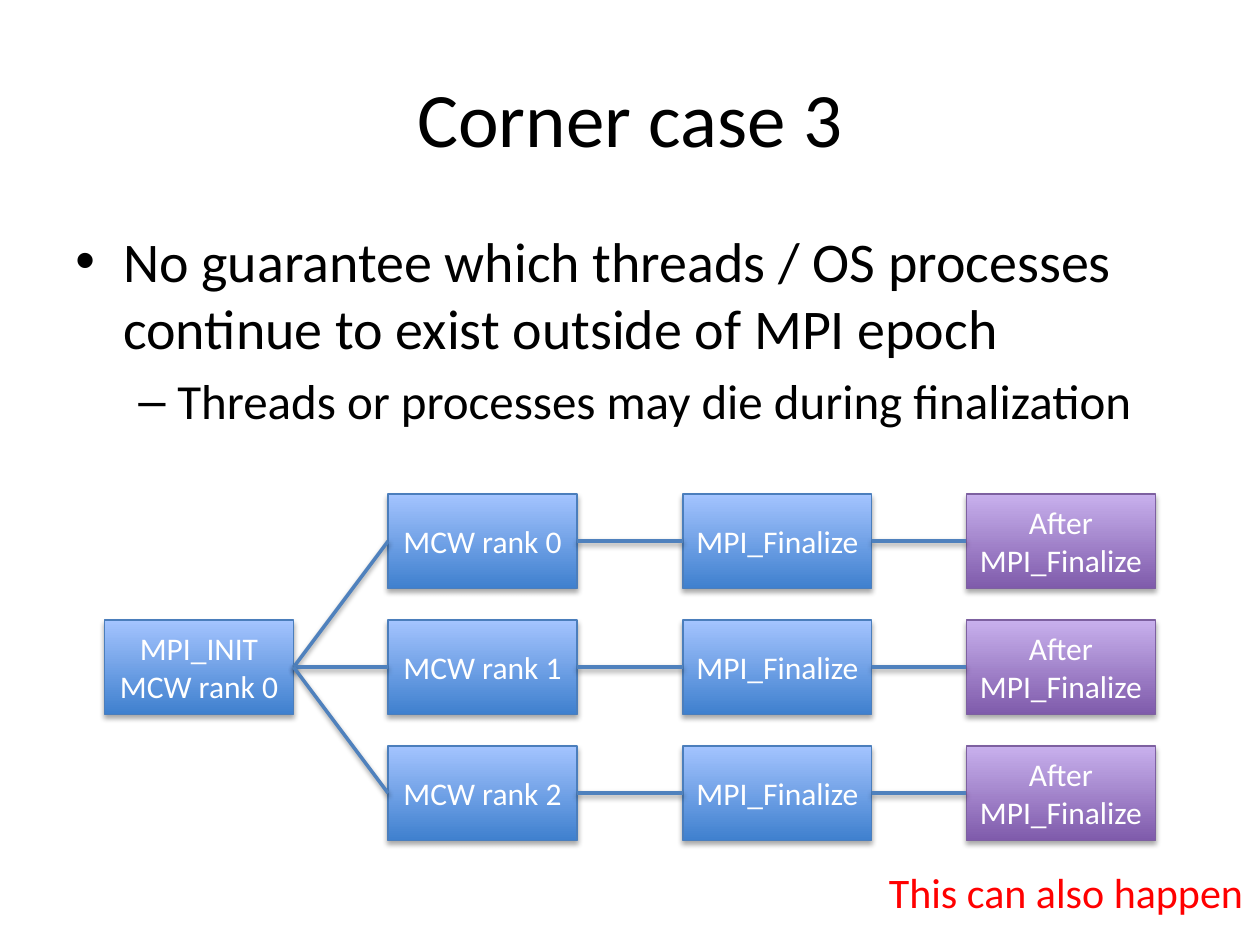
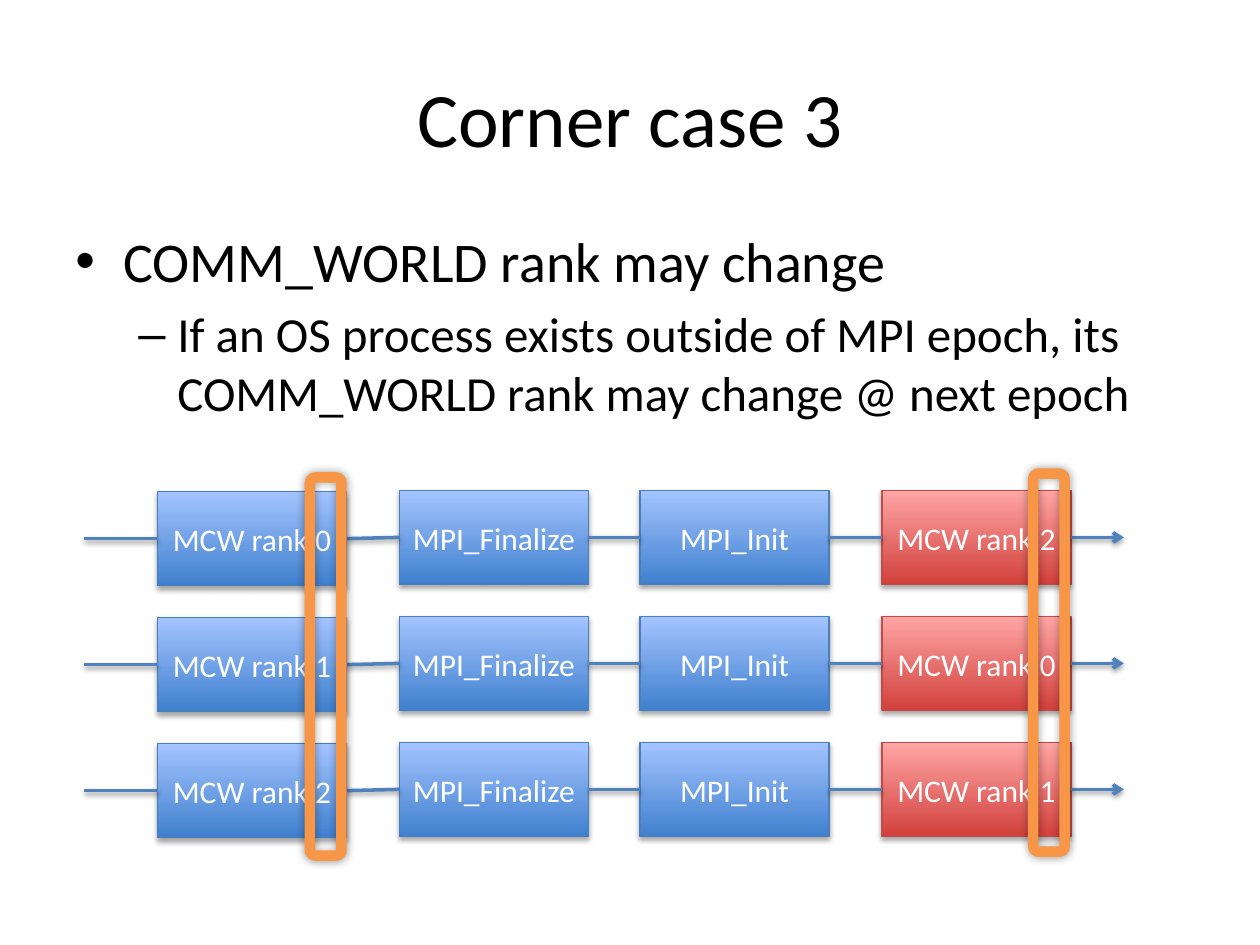
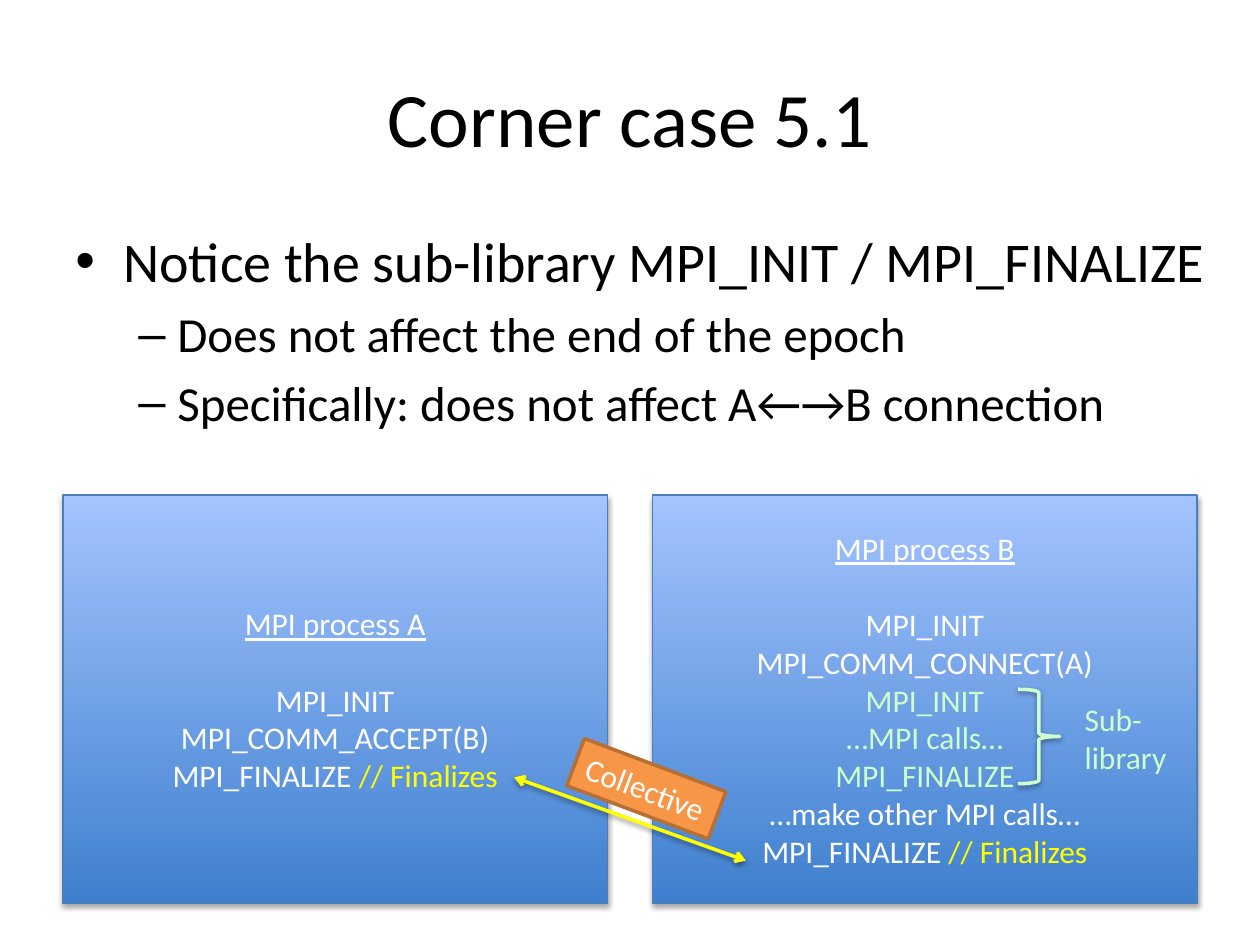
"""Build three slides on MPI session corner cases."""
from dataclasses import dataclass, field

from lxml import etree
from pptx import Presentation
from pptx import util as u
from pptx.dml.color import RGBColor
from pptx.enum import shapes, text
from pptx.oxml import ns

Point = tuple[int, int]


@dataclass(frozen=True)
class Shadow:
    opacity: int
    blur: float
    distance: float
    direction: int


@dataclass(frozen=True)
class Palette:
    bottom: str
    top: str
    outline: str


@dataclass(frozen=True)
class Theme:
    font: str = "Calibri"
    bullet_font: str = "Arial"
    black: str = "000000"
    white: str = "FFFFFF"
    red: str = "FF0000"
    yellow: str = "FFFF00"
    mint: str = "CCFFCC"
    orange: str = "F79646"
    dark_orange: str = "B76F34"
    link: str = "4F81BD"
    blue_box: Palette = Palette("3F80CE", "A4C4FF", "4B7EBC")
    purple_box: Palette = Palette("7F5BAB", "C8B0ED", "7D60A0")
    red_box: Palette = Palette("D1403C", "FFA6A5", "BF4C48")
    box_shadow: Shadow = Shadow(35, 3.1, 1.8, 90)
    line_shadow: Shadow = Shadow(38, 3.1, 1.6, 90)
    frame_shadow: Shadow = Shadow(40, 5, 0, 0)
    title_size: int = 44
    note_size: int = 24
    label_size: int = 18
    box_line: float = 0.75
    link_line: float = 2
    frame_line: float = 6


THEME = Theme()


@dataclass(frozen=True)
class Area:
    left: float
    top: float
    width: float
    height: float

    def lengths(self) -> list[int]:
        return [u.Inches(value) for value in (self.left, self.top, self.width, self.height)]


@dataclass(frozen=True)
class Run:
    text: str
    colour: str = THEME.white
    underline: bool = False


@dataclass(frozen=True)
class Level:
    indent: float
    hanging: float
    mark: str
    size: int


LEVELS = (Level(0.38, 0.38, "•", 32), Level(0.81, 0.31, "–", 28))


@dataclass(frozen=True)
class Bullet:
    text: str
    level: int = 1


@dataclass(frozen=True)
class Column:
    left: float
    top: float
    labels: list[str]
    palette: Palette = field(default=THEME.blue_box)


TITLE = Area(0.5, 0.3, 9, 1.25)
BODY = Area(0.5, 1.75, 9, 4.95)
BOX_WIDTH, BOX_HEIGHT, ROW_STEP = 1.5, 0.75, 1
LEFT_SITE, RIGHT_SITE = 1, 3
RANKS = [f"MCW rank {rank}" for rank in range(3)]


def rgb(colour: str) -> RGBColor:
    return RGBColor.from_string(colour)


def add_child(parent, tag: str, **attributes):
    values = {name: str(value) for name, value in attributes.items()}
    return etree.SubElement(parent, ns.qn(tag), values)


def cast_shadow(shape, shadow: Shadow) -> None:
    properties = shape.element.spPr
    for effects in properties.findall(ns.qn("a:effectLst")):
        properties.remove(effects)
    outer = add_child(add_child(properties, "a:effectLst"), "a:outerShdw",
                      blurRad=u.Pt(shadow.blur), dist=u.Pt(shadow.distance),
                      dir=shadow.direction * 60000, rotWithShape=0)
    add_child(add_child(outer, "a:srgbClr", val=THEME.black), "a:alpha", val=shadow.opacity * 1000)


def set_line(shape, colour: str, width: float) -> None:
    shape.line.color.rgb = rgb(colour)
    shape.line.width = u.Pt(width)


def add_run(paragraph, content: Run, size: int) -> None:
    run = paragraph.add_run()
    run.text = content.text
    run.font.name = THEME.font
    run.font.size = u.Pt(size)
    run.font.color.rgb = rgb(content.colour)
    if content.underline:
        run.font.underline = True


def write(frame, lines: list[list[Run]], size: int, align=text.PP_ALIGN.CENTER) -> None:
    for index, line in enumerate(lines):
        paragraph = frame.add_paragraph() if index else frame.paragraphs[0]
        paragraph.alignment = align
        for content in line:
            add_run(paragraph, content, size)


def add_text(slide, area: Area, lines: list[list[Run]], size: int,
             align=text.PP_ALIGN.CENTER, wrap: bool = True) -> None:
    frame = slide.shapes.add_textbox(*area.lengths()).text_frame
    frame.word_wrap = wrap
    write(frame, lines, size, align)


def add_bullets(slide, area: Area, bullets: list[Bullet]) -> None:
    frame = slide.shapes.add_textbox(*area.lengths()).text_frame
    frame.word_wrap = True
    for index, bullet in enumerate(bullets):
        level = LEVELS[bullet.level]
        paragraph = frame.add_paragraph() if index else frame.paragraphs[0]
        paragraph.level = bullet.level
        paragraph.space_before = u.Pt(level.size * 0.2)
        add_run(paragraph, Run(bullet.text, THEME.black), level.size)
        properties = paragraph._p.get_or_add_pPr()
        properties.set("marL", str(u.Inches(level.indent)))
        properties.set("indent", str(-u.Inches(level.hanging)))
        add_child(properties, "a:buFont", typeface=THEME.bullet_font)
        add_child(properties, "a:buChar", char=level.mark)


def add_case(presentation, title: str, bullets: list[Bullet], body: Area = BODY):
    slide = presentation.slides.add_slide(presentation.slide_layouts[5])
    heading = slide.shapes.title
    heading.left, heading.top, heading.width, heading.height = TITLE.lengths()
    heading.text_frame.vertical_anchor = text.MSO_ANCHOR.MIDDLE
    write(heading.text_frame, [[Run(title, THEME.black)]], THEME.title_size)
    add_bullets(slide, body, bullets)
    return slide


def add_box(slide, area: Area, lines: list[list[Run]], palette: Palette = THEME.blue_box):
    box = slide.shapes.add_shape(shapes.MSO_SHAPE.RECTANGLE, *area.lengths())
    box.fill.gradient()
    box.fill.gradient_angle = 90
    for stop, colour in zip(box.fill.gradient_stops, (palette.bottom, palette.top)):
        stop.color.rgb = rgb(colour)
    set_line(box, palette.outline, THEME.box_line)
    cast_shadow(box, THEME.box_shadow)
    write(box.text_frame, lines, THEME.label_size)
    return box


def add_column(slide, column: Column) -> list:
    return [
        add_box(slide, Area(column.left, column.top + row * ROW_STEP, BOX_WIDTH, BOX_HEIGHT),
                [[Run(label)]], column.palette)
        for row, label in enumerate(column.labels)
    ]


def add_link(slide, start: Point, end: Point, colour: str = THEME.link, arrows: tuple[str, ...] = ()):
    link = slide.shapes.add_connector(shapes.MSO_CONNECTOR.STRAIGHT, *start, *end)
    set_line(link, colour, THEME.link_line)
    outline = link.element.spPr.find(ns.qn("a:ln"))
    for arrow in arrows:
        add_child(outline, f"a:{arrow}", type="arrow")
    cast_shadow(link, THEME.line_shadow)
    return link


def left_end(box) -> Point:
    return box.left, box.top + box.height // 2


def right_end(box) -> Point:
    return box.left + box.width, box.top + box.height // 2


def join(slide, first, second) -> None:
    link = add_link(slide, right_end(first), left_end(second))
    link.begin_connect(first, RIGHT_SITE)
    link.end_connect(second, LEFT_SITE)


def join_columns(slide, columns: list[list]) -> None:
    for firsts, seconds in zip(columns, columns[1:]):
        for first, second in zip(firsts, seconds):
            join(slide, first, second)


def add_outline(slide, preset, area: Area, colour: str, width: float, shadow: Shadow) -> None:
    shape = slide.shapes.add_shape(preset, *area.lengths())
    shape.fill.background()
    set_line(shape, colour, width)
    cast_shadow(shape, shadow)


def build_finalization(presentation) -> None:
    slide = add_case(presentation, "Corner case 3", [
        Bullet("No guarantee which threads / OS processes continue to exist outside of MPI epoch", 0),
        Bullet("Threads or processes may die during finalization"),
    ])
    top = 3.92
    init = add_box(slide, Area(0.83, top + ROW_STEP, BOX_WIDTH, BOX_HEIGHT),
                   [[Run("MPI_INIT")], [Run(RANKS[0])]])
    columns = [add_column(slide, column) for column in (
        Column(3.08, top, RANKS),
        Column(5.42, top, ["MPI_Finalize"] * 3),
        Column(7.67, top, ["After MPI_Finalize"] * 3, THEME.purple_box),
    )]
    for rank_box in columns[0]:
        join(slide, init, rank_box)
    join_columns(slide, columns)
    add_text(slide, Area(6.92, 6.83, 3.08, 0.5),
             [[Run("This can also happen", THEME.red)]], THEME.note_size)


def build_rank_change(presentation) -> None:
    slide = add_case(presentation, "Corner case 3", [
        Bullet("COMM_WORLD rank may change", 0),
        Bullet("If an OS process exists outside of MPI epoch, its COMM_WORLD rank may change @ next epoch"),
    ])
    columns = [add_column(slide, column) for column in (
        Column(1.25, 3.9, RANKS),
        Column(3.17, 3.89, ["MPI_Finalize"] * 3),
        Column(5.08, 3.89, ["MPI_Init"] * 3),
        Column(7, 3.89, RANKS[2:] + RANKS[:2], THEME.red_box),
    )]
    join_columns(slide, columns)
    for first, last in zip(columns[0], columns[-1]):
        entry, leave = left_end(first), right_end(last)
        add_link(slide, (u.Inches(0.67), entry[1]), entry)
        add_link(slide, leave, (u.Inches(8.92), leave[1]), arrows=("tailEnd",))
    for left, top in ((2.46, 3.79), (8.2, 3.76)):
        add_outline(slide, shapes.MSO_SHAPE.ROUNDED_RECTANGLE, Area(left, top, 0.25, 3),
                    THEME.orange, THEME.frame_line, THEME.frame_shadow)


def add_process(slide, left: float, name: str, calls: list[Run]) -> None:
    lines = [[Run(f"MPI process {name}", underline=True)], *([call] for call in calls),
             [Run("MPI_FINALIZE "), Run("// Finalizes", THEME.yellow)]]
    box = add_box(slide, Area(left, 3.93, 4.32, 3.24), lines)
    box.text_frame.paragraphs[0].space_after = u.Pt(22)


def build_sub_library(presentation) -> None:
    slide = add_case(presentation, "Corner case 5.1", [
        Bullet("Notice the sub-library MPI_INIT / MPI_FINALIZE", 0),
        Bullet("Does not affect the end of the epoch"),
        Bullet("Specifically: does not affect A←→B connection"),
    ], Area(0.5, 1.75, 9.5, 4.95))
    library_calls = [Run(call, THEME.mint) for call in ("MPI_INIT", "…MPI calls…", "MPI_FINALIZE")]
    add_process(slide, 0.5, "A", [Run("MPI_INIT"), Run("MPI_COMM_ACCEPT(B)")])
    add_process(slide, 5.18, "B", [Run("MPI_INIT"), Run("MPI_COMM_CONNECT(A)"), *library_calls,
                                   Run("…make other MPI calls…")])
    add_link(slide, (u.Inches(4.08), u.Inches(6.17)), (u.Inches(5.92), u.Inches(6.83)),
             THEME.yellow, ("headEnd", "tailEnd"))

    tag = slide.shapes.add_shape(shapes.MSO_SHAPE.RECTANGLE, *Area(4.53, 6.06, 1.2, 0.4).lengths())
    tag.rotation = 20.6
    tag.shadow.inherit = False
    tag.fill.solid()
    tag.fill.fore_color.rgb = rgb(THEME.orange)
    set_line(tag, THEME.dark_orange, THEME.link_line)
    tag.text_frame.word_wrap = False
    tag.text_frame.vertical_anchor = text.MSO_ANCHOR.TOP
    write(tag.text_frame, [[Run("Collective")]], THEME.label_size, text.PP_ALIGN.LEFT)

    add_outline(slide, shapes.MSO_SHAPE.RIGHT_BRACE, Area(8.08, 5.47, 0.33, 0.75),
                THEME.mint, THEME.link_line, THEME.line_shadow)
    add_text(slide, Area(8.51, 5.51, 0.86, 0.71),
             [[Run(line, THEME.mint)] for line in ("Sub-", "library")],
             THEME.label_size, text.PP_ALIGN.LEFT, wrap=False)


def main() -> None:
    presentation = Presentation()
    presentation.slide_width, presentation.slide_height = u.Inches(10), u.Inches(7.5)
    build_finalization(presentation)
    build_rank_change(presentation)
    build_sub_library(presentation)
    presentation.save("out.pptx")


if __name__ == "__main__":
    main()
